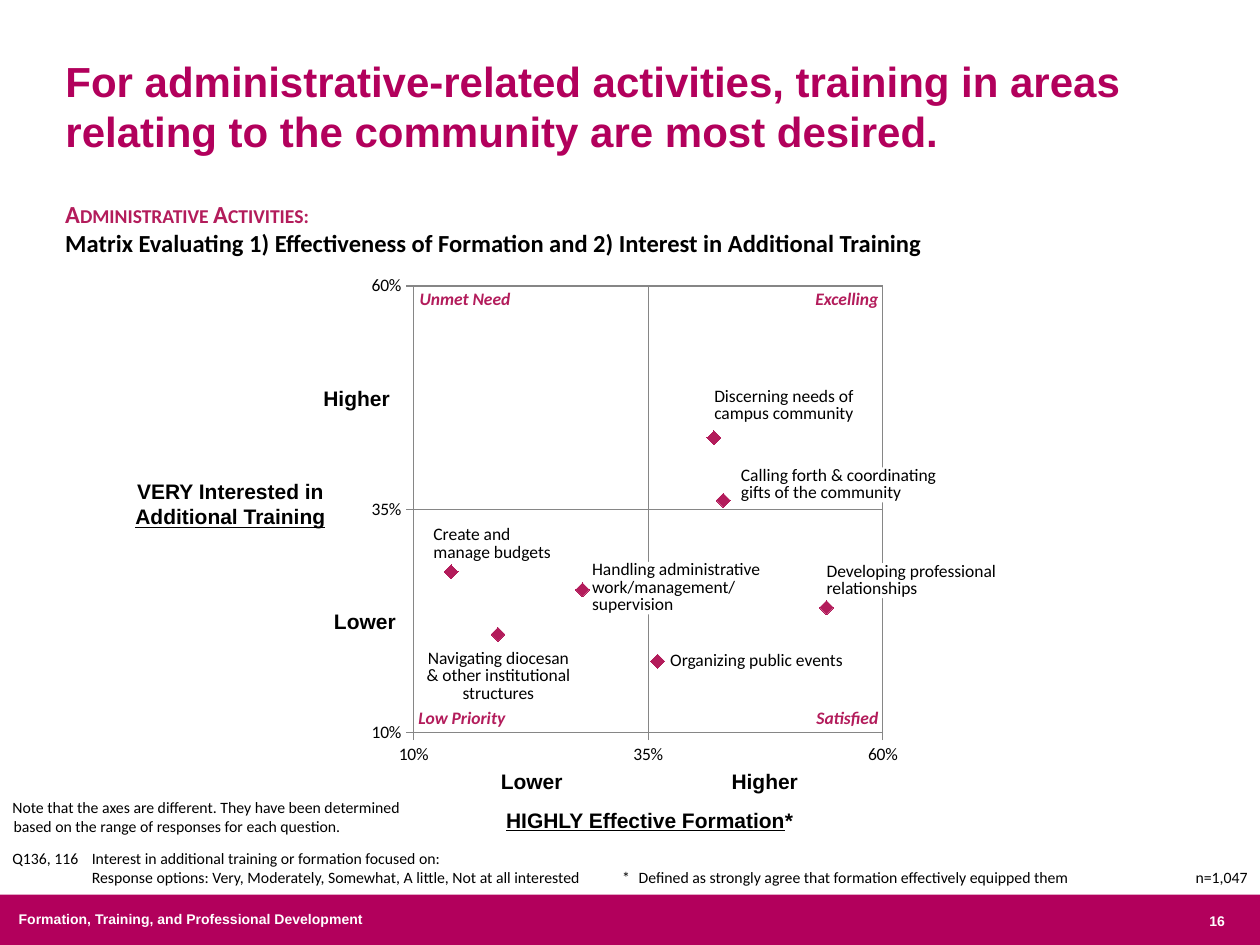
"""Build the slide on training needs for administrative activities."""
from lxml import etree
from pptx import Presentation
from pptx.chart.data import XyChartData
from pptx.dml.color import RGBColor
from pptx.enum.chart import XL_CHART_TYPE, XL_MARKER_STYLE, XL_TICK_MARK
from pptx.enum.shapes import MSO_SHAPE
from pptx.enum.text import MSO_ANCHOR, PP_ALIGN
from pptx.oxml.ns import qn
from pptx.util import Pt

SCATTER = XL_CHART_TYPE.XY_SCATTER
DIAMOND = XL_MARKER_STYLE.DIAMOND
OUT, NONE = XL_TICK_MARK.OUTSIDE, XL_TICK_MARK.NONE
RECT = MSO_SHAPE.RECTANGLE
TOP, LOW = MSO_ANCHOR.TOP, MSO_ANCHOR.BOTTOM
LEFT, MID, RIGHT = PP_ALIGN.LEFT, PP_ALIGN.CENTER, PP_ALIGN.RIGHT
HEX = {"berry": "B2005C", "rose": "B31C5B", "black": "000000",
       "white": "FFFFFF", "grey": "868686"}
TINT = {name: RGBColor.from_string(code) for name, code in HEX.items()}
SANS, BODY = "Arial", "Calibri"


def write(box, lines, size, face, tint="black", bold=False, align=LEFT,
          anchor=TOP, inset=(7.2, 3.6, 7.2, 3.6), hang=0, pitch=None):
    """Fill a box with paragraphs, each a list of (text, changes) runs."""
    frame = box.text_frame
    frame.word_wrap = True
    frame.vertical_anchor = anchor
    (frame.margin_left, frame.margin_top,
     frame.margin_right, frame.margin_bottom) = map(Pt, inset)
    for i, runs in enumerate(lines):
        para = frame.add_paragraph() if i else frame.paragraphs[0]
        para.alignment = align
        if pitch:
            para.line_spacing = Pt(pitch)
        if hang:
            props = para._p.get_or_add_pPr()
            props.set("marL", str(Pt(hang)))
            props.set("indent", str(-Pt(hang)))
        for text, look in runs:
            for j, part in enumerate(text.split("\n")):
                if j:
                    para.add_line_break()
                if not part:
                    continue
                run = para.add_run()
                run.text = part
                font = run.font
                font.name, font.size, font.bold = face, Pt(size), bold
                font.color.rgb = TINT[look.get("tint", tint)]
                if "line" in look:
                    font.underline = True
                if "slant" in look:
                    font.italic = True
                if "caps" in look:
                    run._r.get_or_add_rPr().set("cap", "small")


def block(at, fill):
    """Add a plain filled rectangle."""
    box = slide.shapes.add_shape(RECT, *map(Pt, at))
    box.shadow.inherit = False
    box.fill.solid()
    box.fill.fore_color.rgb = TINT[fill]
    box.line.fill.background()
    return box


deck = Presentation()
deck.slide_width, deck.slide_height = Pt(720), Pt(540)
slide = deck.slides.add_slide(deck.slide_layouts[5])

title = slide.shapes.title
title.left, title.top, title.width, title.height = map(Pt, (30.2, 7.9, 636.5, 85))
write(title, [[("For administrative-related activities, training in areas "
                "relating to the community are most desired.", {})]],
      24, SANS, "berry", True, anchor=LOW)

data = XyChartData(number_format="0%")
series = data.add_series("Series 1")
for x, y in [(0.54, 0.24), (0.42, 0.43), (0.43, 0.36), (0.36, 0.18),
             (0.28, 0.26), (0.19, 0.21), (0.14, 0.28)]:
    series.add_data_point(x, y)
chart = slide.shapes.add_chart(
    SCATTER, Pt(198), Pt(149.8), Pt(324.7), Pt(296.6), data).chart
chart.has_legend = chart.has_title = False
chart.font.name, chart.font.size = BODY, Pt(10)
chart.font.color.rgb = TINT["black"]
for axis in (chart.category_axis, chart.value_axis):
    axis.minimum_scale, axis.maximum_scale, axis.major_unit = 0.1, 0.6, 0.25
    axis.major_tick_mark, axis.minor_tick_mark = OUT, NONE
    axis.has_major_gridlines = True
    axis.tick_labels.number_format = "0%"
    axis.tick_labels.number_format_is_linked = False
    for line in (axis.format.line, axis.major_gridlines.format.line):
        line.width = Pt(0.75)
        line.color.rgb = TINT["grey"]
plot = chart.plots[0]
plot.vary_by_categories = False
dots = plot.series[0]
dots.smooth = False
dots.format.line.fill.background()
dots.marker.style, dots.marker.size = DIAMOND, 8
dots.marker.format.fill.solid()
dots.marker.format.fill.fore_color.rgb = TINT["rose"]
dots.marker.format.line.color.rgb = TINT["rose"]
area = chart._chartSpace.chart.plotArea
for old in area.findall(qn("c:layout")):
    area.remove(old)
layout = etree.Element(qn("c:layout"))
area.insert(0, layout)
manual = etree.SubElement(layout, qn("c:manualLayout"))
for tag, val in [("layoutTarget", "inner"), ("xMode", "edge"), ("yMode", "edge"),
                 ("x", "0.118"), ("y", "0.046"), ("w", "0.826"), ("h", "0.861")]:
    etree.SubElement(manual, qn("c:" + tag)).set("val", val)

for text, x, y, align, anchor in [
        ("Excelling", 370.8, 163.4, RIGHT, TOP),
        ("Unmet Need", 238.3, 163.4, LEFT, TOP),
        ("Low Priority", 237.6, 291.6, LEFT, LOW),
        ("Satisfied", 370.8, 291.6, RIGHT, LOW)]:
    box = slide.shapes.add_textbox(Pt(x), Pt(y), Pt(132.5), Pt(128.2))
    write(box, [[(text, {"slant": 1})]], 10, BODY, "rose", True, align, anchor,
          (1.44, 1.44 if anchor == TOP else 3.6, 1.44, 3.6))

block((0, 511.2, 720, 28.8), "berry")

for text, at, align in [
        ("Developing professional relationships", (472.3, 321.8, 113.8, 20), LEFT),
        ("Calling forth & coordinating gifts of the community",
         (423.4, 267.1, 113.8, 20), LEFT),
        ("Discerning needs of campus community", (408.2, 221.8, 88.6, 20), LEFT),
        ("Organizing public events", (383, 373, 113.8, 10), LEFT),
        ("Handling administrative work/management/ supervision",
         (338.4, 321.1, 100.8, 30), LEFT),
        ("Navigating diocesan & other institutional structures",
         (241.9, 371.5, 85.7, 30), MID),
        ("Create and manage budgets", (247.7, 301, 73.4, 20), LEFT)]:
    write(block(at, "white"), [[(text, {})]], 10, BODY, align=align,
          inset=(0, 0, 0, 0), pitch=10)

for runs, at, align in [
        ([("HIGHLY Effective Formation", {"line": 1}), ("*", {})],
         (254.2, 457.9, 234, 21.6), MID),
        ([("Lower", {})], (236.9, 435.6, 133.9, 21.6), MID),
        ([("Higher", {})], (370.8, 435.6, 132.5, 21.6), MID),
        ([("VERY Interested in\n", {}), ("Additional Training", {"line": 1})],
         (69.8, 270, 123.8, 36), MID),
        ([("Higher", {})], (172.3, 216.7, 57.6, 21.6), RIGHT),
        ([("Lower", {})], (175.7, 344.2, 57.6, 21.6), RIGHT)]:
    box = slide.shapes.add_textbox(*map(Pt, at))
    write(box, [runs], 12, SANS, bold=True, align=align)

for text, at, align in [
        ("16", (423.4, 517.7, 283.7, 17.3), RIGHT),
        ("Formation, Training, and Professional Development",
         (3.6, 517, 283.7, 17.3), LEFT)]:
    box = slide.shapes.add_textbox(*map(Pt, at))
    write(box, [[(text, {})]], 8, SANS, "white", True, align)

for text, at, align, hang in [
        ("Q136, 116\tInterest in additional training or formation focused on:\n"
         "Response options: Very, Moderately, Somewhat, A little, "
         "Not at all interested", (0, 481.7, 348.5, 28.8), LEFT, 45.4),
        ("n=1,047", (666.7, 492.5, 53.3, 18), RIGHT, 0),
        ("*\tDefined as strongly agree that formation effectively equipped them",
         (348.5, 492.5, 283.7, 18), LEFT, 9.4),
        ("Note that the axes are different. They have been determined based on "
         "the range of responses for each question.",
         (0, 452.2, 239, 28.8), LEFT, 0.72)]:
    box = slide.shapes.add_textbox(*map(Pt, at))
    write(box, [[(text, {})]], 9, BODY, align=align, hang=hang)

box = slide.shapes.add_textbox(Pt(30.2), Pt(110.2), Pt(620.6), Pt(41))
write(box, [[("Administrative Activities:", {"caps": 1, "tint": "rose"})],
            [("Matrix Evaluating 1) Effectiveness of Formation and "
              "2) Interest in Additional Training", {})]], 14, BODY, bold=True)

deck.save("out.pptx")
